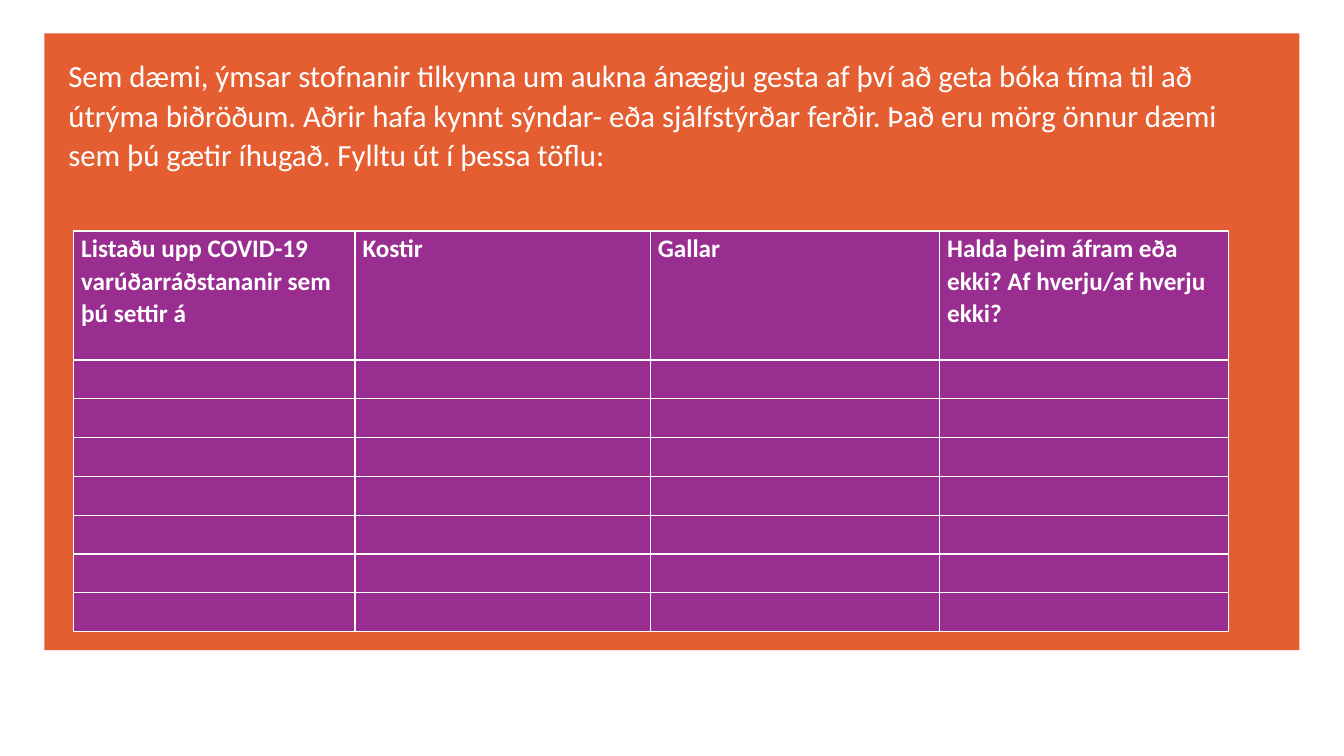
from dataclasses import dataclass

from lxml import etree
from pptx import Presentation
from pptx.dml.color import RGBColor
from pptx.enum import shapes, text
from pptx.oxml import ns
from pptx.slide import Slide
from pptx.table import Table, _Cell
from pptx.text.text import _Paragraph
from pptx.util import Pt

WHITE = RGBColor(0xFF, 0xFF, 0xFF)
ORANGE = RGBColor(0xE4, 0x5E, 0x32)
PURPLE = RGBColor(0x9A, 0x2E, 0x90)

FONT_NAME = "Calibri"
BORDER_WIDTH = Pt(1)
HEADER_HEIGHT = Pt(92.2)
ROW_HEIGHT = Pt(27.7)
EMPTY_ROWS = 7

INTRO = (
    "Sem dæmi, ýmsar stofnanir tilkynna um aukna ánægju gesta af því að geta "
    "bóka tíma til að útrýma biðröðum. Aðrir hafa kynnt sýndar- eða sjálfstýrðar "
    "ferðir. Það eru mörg önnur dæmi sem þú gætir íhugað. Fylltu út í þessa töflu:"
)


@dataclass(frozen=True)
class Area:
    left: float
    top: float
    width: float
    height: float

    def lengths(self) -> tuple[Pt, Pt, Pt, Pt]:
        return Pt(self.left), Pt(self.top), Pt(self.width), Pt(self.height)


@dataclass(frozen=True)
class Column:
    heading: str
    width: float


PANEL = Area(31.7, 23.8, 896.4, 440.6)
INTRO_AREA = Area(41.8, 35.3, 866.2, 326.2)
TABLE_AREA = Area(52.6, 165, 825.1, 286.1)

COLUMNS = [
    Column("Listaðu upp COVID-19 varúðarráðstananir sem þú settir á", 201),
    Column("Kostir", 211),
    Column("Gallar", 206.6),
    Column("Halda þeim áfram eða ekki? Af hverju/af hverju ekki?", 206.5),
]


def set_attributes(target: object, values: dict) -> None:
    for name, value in values.items():
        setattr(target, name, value)


def format_paragraph(para: _Paragraph, size: float, bold: bool) -> None:
    set_attributes(para, {"line_spacing": 1.07, "space_after": Pt(8)})
    set_attributes(para.font, {"name": FONT_NAME, "size": Pt(size), "bold": bold})
    para.font.color.rgb = WHITE


def add_panel(page: Slide) -> None:
    panel = page.shapes.add_shape(shapes.MSO_SHAPE.RECTANGLE, *PANEL.lengths())
    panel.shadow.inherit = False
    panel.fill.solid()
    panel.fill.fore_color.rgb = ORANGE
    panel.line.fill.background()


def add_intro(page: Slide) -> None:
    box = page.shapes.add_textbox(*INTRO_AREA.lengths())
    set_attributes(box.text_frame, {
        "word_wrap": True,
        "auto_size": text.MSO_AUTO_SIZE.NONE,
        "text": INTRO,
    })
    format_paragraph(box.text_frame.paragraphs[0], 22, False)


def add_borders(cell: _Cell) -> None:
    properties = cell._tc.get_or_add_tcPr()
    for side in ("lnL", "lnR", "lnT", "lnB"):
        line = etree.SubElement(properties, ns.qn(f"a:{side}"), w=str(BORDER_WIDTH))
        fill = etree.SubElement(line, ns.qn("a:solidFill"))
        etree.SubElement(fill, ns.qn("a:srgbClr"), val=str(WHITE))


def format_cell(cell: _Cell) -> None:
    add_borders(cell)
    cell.fill.solid()
    cell.fill.fore_color.rgb = PURPLE
    set_attributes(cell, {
        "margin_left": Pt(5.4),
        "margin_right": Pt(5.4),
        "margin_top": 0,
        "margin_bottom": 0,
    })
    format_paragraph(cell.text_frame.paragraphs[0], 18, True)


def fill_table(table: Table) -> None:
    for row in table.rows:
        row.height = ROW_HEIGHT
    table.rows[0].height = HEADER_HEIGHT
    for index, column in enumerate(COLUMNS):
        table.columns[index].width = Pt(column.width)
        table.cell(0, index).text = column.heading
    for cell in table.iter_cells():
        format_cell(cell)


def main() -> None:
    deck = Presentation()
    set_attributes(deck, {"slide_width": Pt(960), "slide_height": Pt(540)})
    page = deck.slides.add_slide(deck.slide_layouts.get_by_name("Blank"))
    add_panel(page)
    add_intro(page)
    frame = page.shapes.add_table(EMPTY_ROWS + 1, len(COLUMNS), *TABLE_AREA.lengths())
    fill_table(frame.table)
    deck.save("out.pptx")


if __name__ == "__main__":
    main()
